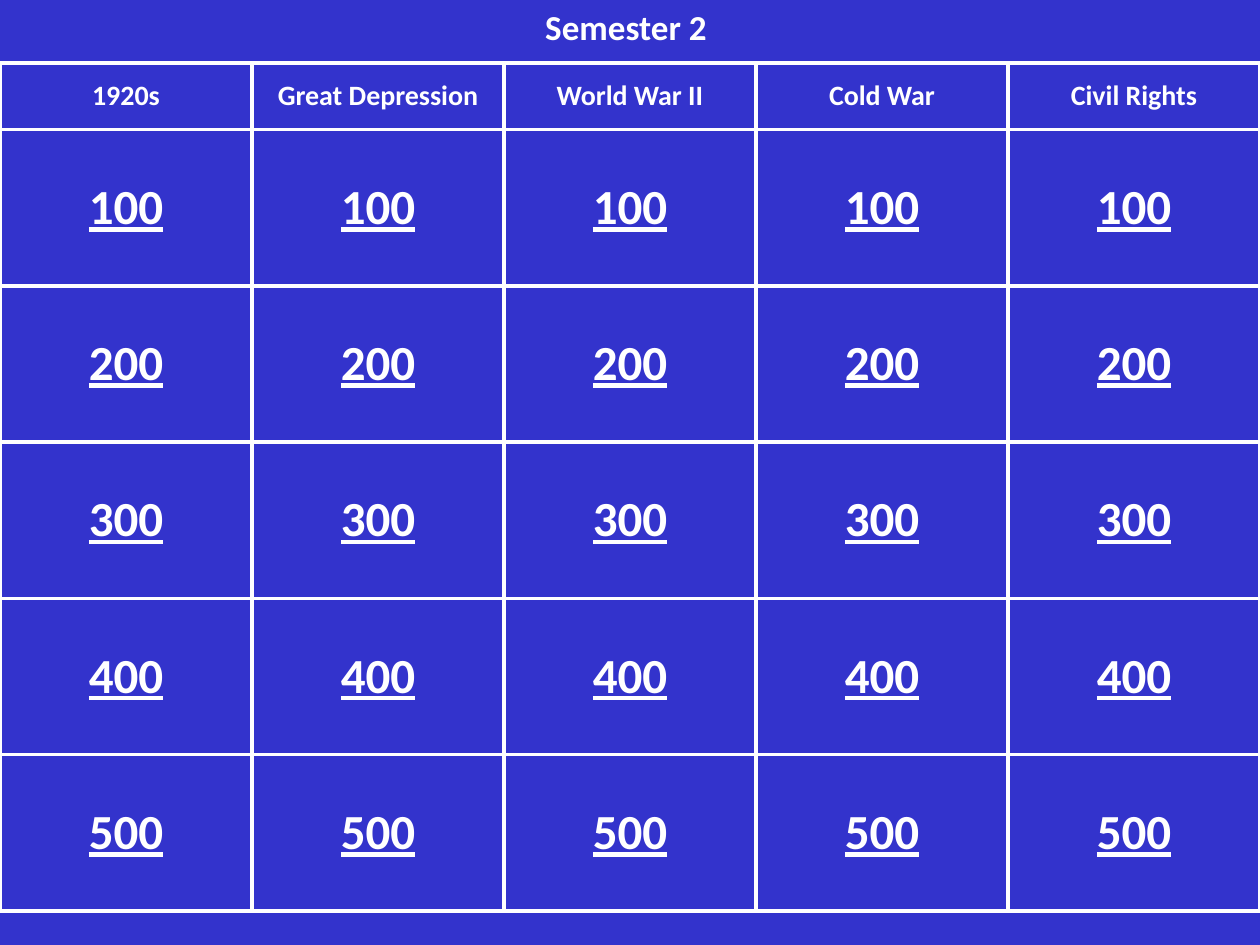
from dataclasses import dataclass

from lxml.etree import SubElement
from pptx import Presentation
from pptx.dml.color import RGBColor
from pptx.enum.text import MSO_ANCHOR, PP_ALIGN
from pptx.oxml.ns import qn
from pptx.util import Inches, Pt

BLUE = "3333CC"
WHITE = "FFFFFF"
CATEGORIES = ["1920s", "Great Depression", "World War II", "Cold War", "Civil Rights"]
POINTS = [100, 200, 300, 400, 500]
COLUMN_WIDTH = 2
BORDER_WIDTH = 2.25


@dataclass
class BoardRow:
    labels: list[str]
    height: float
    size: int
    underline: bool


def color(value: str) -> RGBColor:
    return RGBColor.from_string(value)


def write(para, text: str, size: int, underline: bool = False) -> None:
    para.alignment = PP_ALIGN.CENTER
    span = para.add_run()
    span.text = text
    span.font.color.rgb = color(WHITE)
    formats = {"name": "Calibri", "size": Pt(size), "bold": True, "underline": underline}
    for name, value in formats.items():
        setattr(span.font, name, value)


def add_space_before(para, percent: int) -> None:
    spacing = SubElement(para._p.get_or_add_pPr(), qn("a:spcBef"))
    SubElement(spacing, qn("a:spcPct"), val=str(percent * 1000))


def add_borders(cell) -> None:
    properties = cell._tc.get_or_add_tcPr()
    for side in ("lnL", "lnR", "lnT", "lnB"):
        line = SubElement(properties, qn(f"a:{side}"), w=str(Pt(BORDER_WIDTH)))
        fill = SubElement(line, qn("a:solidFill"))
        SubElement(fill, qn("a:srgbClr"), val=WHITE)


def draw_cell(cell, text: str, row: BoardRow) -> None:
    add_borders(cell)
    cell.fill.solid()
    cell.fill.fore_color.rgb = color(BLUE)
    cell.vertical_anchor = MSO_ANCHOR.MIDDLE
    para = cell.text_frame.paragraphs[0]
    write(para, text, row.size, row.underline)
    add_space_before(para, 20)


def draw_board(page, rows: list[BoardRow]) -> None:
    width = COLUMN_WIDTH * len(CATEGORIES)
    height = sum(row.height for row in rows)
    frame = page.shapes.add_table(
        len(rows), len(CATEGORIES), Inches(0), Inches(0.5), Inches(width), Inches(height)
    )
    board = frame.table
    board.first_row = False
    board.horz_banding = False
    for column in board.columns:
        column.width = Inches(COLUMN_WIDTH)
    for row_index, row in enumerate(rows):
        board.rows[row_index].height = Inches(row.height)
        for column_index, label in enumerate(row.labels):
            draw_cell(board.cell(row_index, column_index), label, row)


def draw_title(page, text: str) -> None:
    box = page.shapes.add_textbox(Inches(0.75), Inches(0), Inches(8.5), Inches(0.42))
    box.text_frame.word_wrap = True
    box.text_frame.vertical_anchor = MSO_ANCHOR.MIDDLE
    write(box.text_frame.paragraphs[0], text, 20)


def main() -> None:
    deck = Presentation()
    deck.slide_width = Inches(10)
    deck.slide_height = Inches(7.5)
    page = deck.slides.add_slide(deck.slide_layouts[6])
    page.background.fill.solid()
    page.background.fill.fore_color.rgb = color(BLUE)
    header = BoardRow(CATEGORIES, 0.53, 16, False)
    clues = [BoardRow([str(points)] * len(CATEGORIES), 1.24, 28, True) for points in POINTS]
    draw_board(page, [header, *clues])
    draw_title(page, "Semester 2 ")
    deck.save("out.pptx")


if __name__ == "__main__":
    main()
